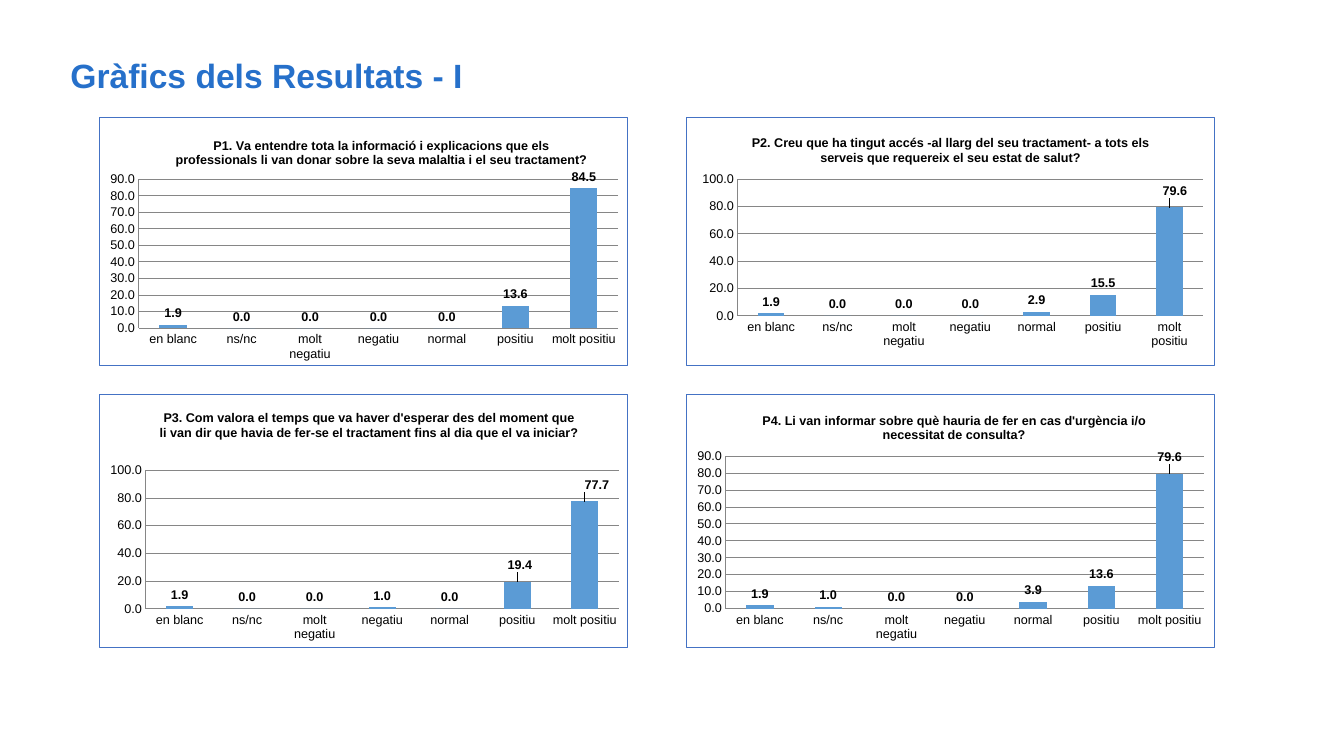
import pptx
import pptx.util
import pptx.chart.data
import pptx.dml.color
import pptx.enum.chart
import pptx.enum.text
import pptx.oxml
import pptx.oxml.ns

Inches, Pt = pptx.util.Inches, pptx.util.Pt
BLUE, BAR, GREY, BLACK = "4472C4", "5B9BD5", "868686", "000000"
ANSWERS = ["en blanc", "ns/nc", "molt negatiu", "negatiu", "normal",
           "positiu", "molt positiu"]

# question, values, axis top, axis step, title place, plot area, label shifts
CHARTS = [
    ("P1. Va entendre tota la informació i explicacions que els professionals "
     "li van donar sobre la seva malaltia i el seu tractament?",
     [1.9, 0, 0, 0, 0, 13.6, 84.5], 90, 10,
     (0.14, 0.07), (0.075, 0.25, 0.907, 0.6), {}),
    ("P2. Creu que ha tingut accés -al llarg del seu tractament- a tots els "
     "serveis que requereix el seu estat de salut?",
     [1.9, 0, 0, 0, 2.9, 15.5, 79.6], 100, 20,
     (0.12, 0.06), (0.098, 0.25, 0.88, 0.551), {6: (0.01, -0.02)}),
    ("P3. Com valora el temps que va haver d'esperar des del moment que li "
     "van dir que havia de fer-se el tractament fins al dia que el va iniciar?",
     [1.9, 0, 0, 1, 0, 19.4, 77.7], 100, 20,
     (0.11, 0.05), (0.088, 0.3, 0.895, 0.547),
     {5: (0.005, -0.02), 6: (0.023, -0.02)}),
    ("P4. Li van informar sobre què hauria de fer en cas d'urgència i/o "
     "necessitat de consulta?",
     [1.9, 1, 0, 0, 3.9, 13.6, 79.6], 90, 10,
     (0.14, 0.06), (0.075, 0.244, 0.905, 0.602), {6: (0, -0.02)}),
]


def color(text):
    return pptx.dml.color.RGBColor.from_string(text)


def layout(place, inner=False, edge=True):
    """Make a manual chart layout from x, y and, if given, w, h."""
    tags = [("layoutTarget", "inner")] if inner else []
    if edge:
        tags += [("xMode", "edge"), ("yMode", "edge")]
    tags += zip("xywh", place)
    body = "".join(f'<c:{tag} val="{value}"/>' for tag, value in tags)
    space = pptx.oxml.ns.nsdecls("c")
    return pptx.oxml.parse_xml(
        f"<c:layout {space}><c:manualLayout>{body}</c:manualLayout></c:layout>")


class Deck:
    def __init__(self):
        self.show = pptx.Presentation()
        self.show.slide_width = Inches(13.33)
        self.show.slide_height = Inches(7.5)
        self.slide = self.show.slides.add_slide(self.show.slide_layouts[6])
        self.face = "Arial"

    def font(self, font, size, tint=BLACK, bold=False):
        font.name, font.size, font.bold = self.face, Pt(size), bold
        font.color.rgb = color(tint)

    def title(self, text, left, top, width, height):
        box = self.slide.shapes.add_textbox(
            Inches(left), Inches(top), Inches(width), Inches(height))
        frame = box.text_frame
        frame.word_wrap = True
        frame.vertical_anchor = pptx.enum.text.MSO_ANCHOR.MIDDLE
        para = frame.paragraphs[0]
        para.line_spacing = 0.9
        run = para.add_run()
        run.text = text
        self.font(run.font, 24, "2670CA", True)

    def chart(self, entry, left, top, width, height):
        question, values, peak, step, spot, area, shifts = entry
        data = pptx.chart.data.CategoryChartData(number_format="0.0")
        data.categories = ANSWERS
        data.add_series("Series 1", values)
        chart = self.slide.shapes.add_chart(
            pptx.enum.chart.XL_CHART_TYPE.COLUMN_CLUSTERED,
            Inches(left), Inches(top), Inches(width), Inches(height),
            data).chart
        chart.font.name, chart.font.size = "Lato", Pt(10)
        chart.font.color.rgb = color(BLACK)
        chart.has_legend = False
        self.head(chart, question, spot)
        self.axes(chart, peak, step)
        self.bars(chart.plots[0], shifts)
        root = chart.element
        root.chart.plotArea.insert(0, layout(area, inner=True))
        for old in root.chart.plotArea.findall(
                pptx.oxml.ns.qn("c:layout"))[1:]:
            root.chart.plotArea.remove(old)
        self.frame(root)

    def head(self, chart, text, spot):
        chart.has_title = True
        title = chart.chart_title
        run = title.text_frame.paragraphs[0].add_run()
        run.text = text
        self.font(run.font, 9, bold=True)
        title.include_in_layout = False
        node = title.element if hasattr(title, "element") else title._element
        for old in node.findall(pptx.oxml.ns.qn("c:layout")):
            node.remove(old)
        node.insert(1, layout(spot))

    def axes(self, chart, peak, step):
        none = pptx.enum.chart.XL_TICK_MARK.NONE
        for axis in (chart.category_axis, chart.value_axis):
            axis.major_tick_mark = axis.minor_tick_mark = none
            axis.format.line.color.rgb = color(GREY)
            axis.format.line.width = Pt(0.75)
            self.font(axis.tick_labels.font, 9)
        axis.minimum_scale, axis.maximum_scale = 0, peak
        axis.major_unit = step
        axis.tick_labels.number_format = "0.0"
        axis.tick_labels.number_format_is_linked = False
        axis.has_major_gridlines = True
        grid = axis.major_gridlines.format.line
        grid.color.rgb, grid.width = color(GREY), Pt(0.75)

    def bars(self, plot, shifts):
        plot.gap_width = 150
        plot.vary_by_categories = False
        series = plot.series[0]
        series.format.fill.solid()
        series.format.fill.fore_color.rgb = color(BAR)
        end = pptx.enum.chart.XL_LABEL_POSITION.OUTSIDE_END
        labels = series.data_labels
        labels.show_value = True
        labels.number_format = "0.0"
        labels.number_format_is_linked = False
        labels.position = end
        self.font(labels.font, 9, bold=True)
        for index, shift in shifts.items():
            label = series.points[index].data_label
            self.font(label.font, 9, bold=True)
            label.position = end
            node = labels._element.xpath(f"c:dLbl[c:idx/@val='{index}']")[0]
            node.insert(1, layout(shift, edge=False))

    def frame(self, root):
        """Give the chart area a white fill and a thin blue border."""
        space = pptx.oxml.ns.nsdecls("c", "a")
        root.chart.addnext(pptx.oxml.parse_xml(
            f'<c:spPr {space}><a:solidFill><a:srgbClr val="FFFFFF"/>'
            f'</a:solidFill><a:ln w="{Pt(0.75)}"><a:solidFill>'
            f'<a:srgbClr val="{BLUE}"/></a:solidFill></a:ln></c:spPr>'))


def main():
    deck = Deck()
    deck.title("Gràfics dels Resultats - I", 0.6, 0.54, 12.19, 0.46)
    rows = [(1.16, 2.47), (3.91, 2.52)]
    for index, entry in enumerate(CHARTS):
        row, col = divmod(index, 2)
        top, height = rows[row]
        deck.chart(entry, 0.98 + 5.82 * col, top, 5.25, height)
    deck.show.save("out.pptx")


if __name__ == "__main__":
    main()
